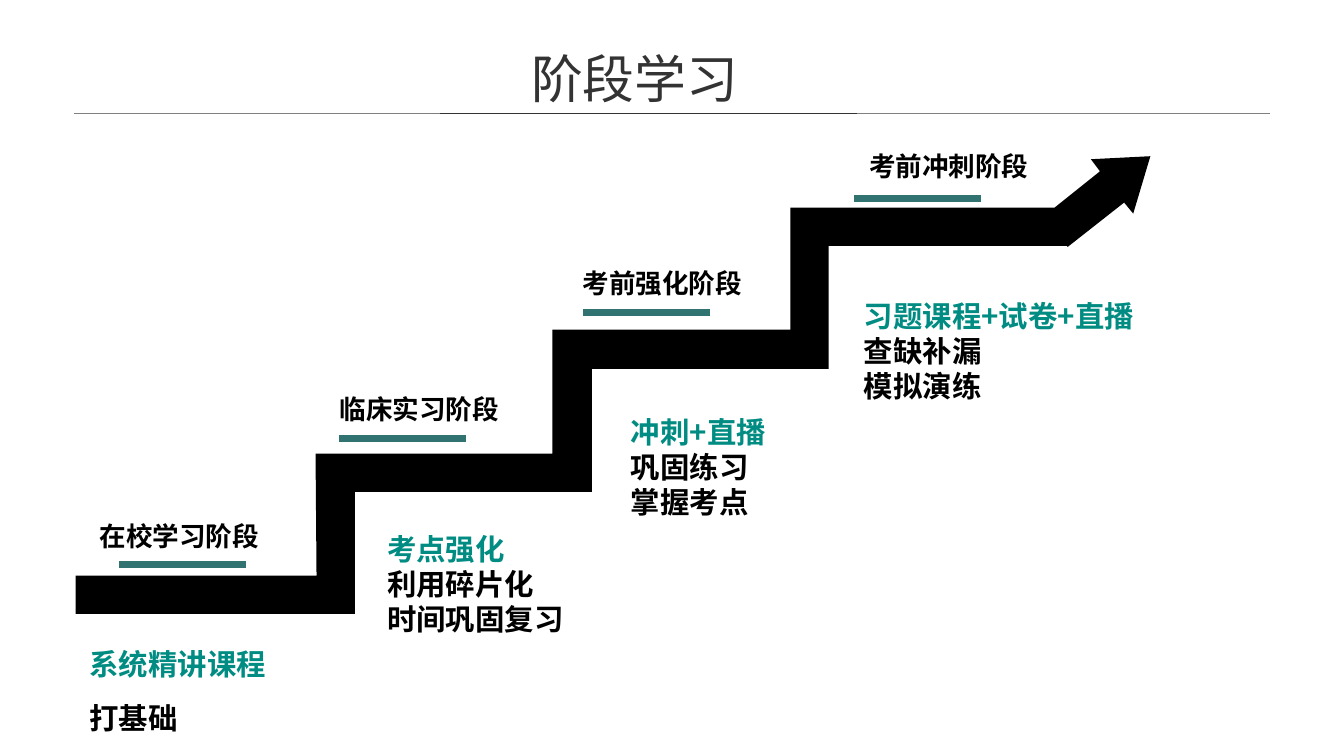
from lxml import etree
from pptx import Presentation
from pptx.dml.color import RGBColor
from pptx.enum.shapes import MSO_CONNECTOR
from pptx.enum.text import MSO_ANCHOR, PP_ALIGN
from pptx.oxml.ns import qn
from pptx.util import Inches, Pt

BLACK = RGBColor(0x00, 0x00, 0x00)
CHARCOAL = RGBColor(0x33, 0x33, 0x33)
GREY = RGBColor(0x80, 0x80, 0x80)
TEAL = RGBColor(0x00, 0x8C, 0x82)
DARK_TEAL = RGBColor(0x30, 0x73, 0x71)
FONT = "Noto Sans CJK SC"

# Name, label position, label font, underline start
STAGES = [
    ("在校学习阶段", (0.88, 5.11), FONT, (1.18, 5.6)),
    ("临床实习阶段", (3.26, 3.85), "Arial", (3.36, 4.35)),
    ("考前强化阶段", (5.67, 2.6), FONT, (5.78, 3.1)),
    ("考前冲刺阶段", (8.51, 1.44), FONT, (8.47, 1.97)),
]

# Position and size, lines of text, line pitch in points
DETAILS = [
    ((0.79, 6.16, 2.13, 1.16), ["系统精讲课程", "打基础"], 38),
    ((3.74, 5.01, 4.91, 1.36), ["考点强化", "利用碎片化", "时间巩固复习"], 25),
    ((6.16, 3.85, 4.07, 1.36), ["冲刺+直播", "巩固练习", "掌握考点"], 25),
    ((8.47, 2.7, 4.91, 1.72), ["习题课程+试卷+直播", "查缺补漏", "模拟演练"], 25),
]
FIRST_LINE_PITCH = 40

# Staircase outline: upper edge from the foot to the tip, then back below
STAIRCASE = [
    (0.75, 5.71), (3.14, 5.71), (3.13, 4.5), (5.48, 4.5), (5.48, 3.27),
    (7.84, 3.27), (7.84, 2.06), (10.46, 2.06), (10.91, 1.7), (10.82, 1.58),
    (11.41, 1.55), (11.24, 2.12), (11.15, 2.01), (10.59, 2.45), (10.58, 2.44),
    (8.22, 2.44), (8.22, 3.66), (5.87, 3.66), (5.87, 4.88), (3.52, 4.88),
    (3.52, 6.09), (0.75, 6.09),
]


def add_text(page, place, lines, size, colors, font=FONT, bold=True,
             align=PP_ALIGN.LEFT, anchor=MSO_ANCHOR.TOP, wrap=True,
             inset=(0, 0), pitches=None):
    box = page.shapes.add_textbox(*map(Inches, place))
    frame = box.text_frame
    frame.word_wrap = wrap
    frame.vertical_anchor = anchor
    frame.margin_left = frame.margin_right = Inches(inset[0])
    frame.margin_top = frame.margin_bottom = Inches(inset[1])
    for index, (line, color) in enumerate(zip(lines, colors)):
        para = frame.add_paragraph() if index else frame.paragraphs[0]
        para.alignment = align
        if pitches:
            para.line_spacing = Pt(pitches[index])
        span = para.add_run()
        span.text = line
        span.font.size = Pt(size)
        span.font.bold = bold
        span.font.color.rgb = color
        span.font.name = font
        east_asian = etree.SubElement(span.font._element, qn("a:ea"))
        east_asian.set("typeface", FONT)


def add_rule(page, left, top, length, color, weight):
    rule = page.shapes.add_connector(
        MSO_CONNECTOR.STRAIGHT, Inches(left), Inches(top),
        Inches(left + length), Inches(top))
    rule.line.color.rgb = color
    rule.line.width = Pt(weight)
    etree.SubElement(rule._element.spPr, qn("a:effectLst"))


def add_outline(page, points, color):
    corners = [(Inches(x), Inches(y)) for x, y in points]
    builder = page.shapes.build_freeform(*corners[0])
    builder.add_line_segments(corners[1:], close=True)
    outline = builder.convert_to_shape()
    outline.shadow.inherit = False
    outline.fill.solid()
    outline.fill.fore_color.rgb = color
    outline.line.fill.background()


def add_stage(page, name, label_at, font, underline_at):
    add_text(page, (*label_at, 1.8, 0.42), [name], 19, [BLACK], font=font,
             align=PP_ALIGN.CENTER, anchor=MSO_ANCHOR.MIDDLE, wrap=False)
    add_rule(page, *underline_at, 1.26, DARK_TEAL, 5)


def add_detail(page, place, lines, pitch):
    others = len(lines) - 1
    add_text(page, place, lines, 21, [TEAL] + [BLACK] * others,
             inset=(0.1, 0.05), pitches=[FIRST_LINE_PITCH] + [pitch] * others)


def main():
    deck = Presentation()
    deck.slide_width, deck.slide_height = Inches(13.33), Inches(7.5)
    page = deck.slides.add_slide(deck.slide_layouts[6])

    # Title and its rules
    add_rule(page, 0.73, 1.12, 11.87, GREY, 0.25)
    add_text(page, (1.1, 0.39, 10.39, 0.76), ["阶段学习"], 37, [CHARCOAL],
             bold=False, align=PP_ALIGN.CENTER, anchor=MSO_ANCHOR.MIDDLE,
             inset=(0.13, 0.07))
    add_rule(page, 4.36, 1.13, 4.14, CHARCOAL, 0.75)

    # Staircase arrow
    add_outline(page, STAIRCASE, BLACK)

    # Stage names above the steps, details below
    for stage in STAGES:
        add_stage(page, *stage)
    for detail in DETAILS:
        add_detail(page, *detail)

    deck.save("out.pptx")


if __name__ == "__main__":
    main()
